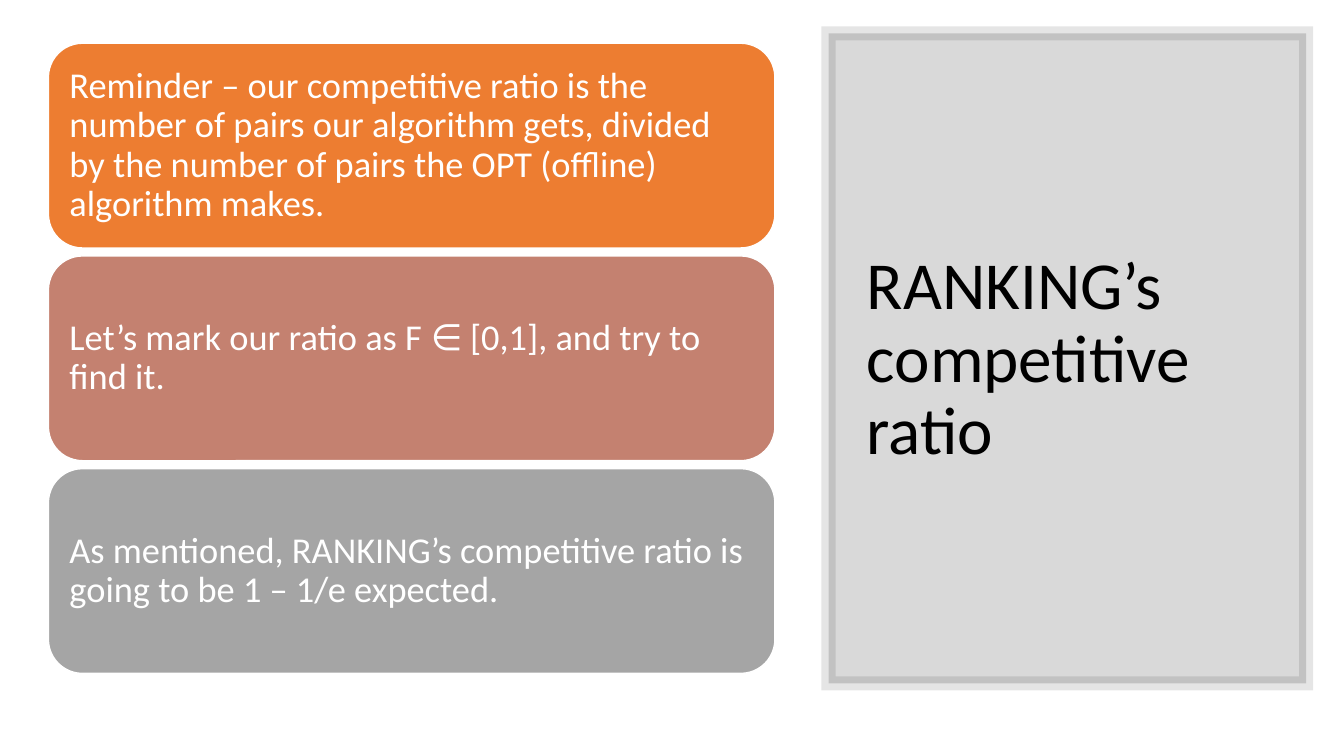
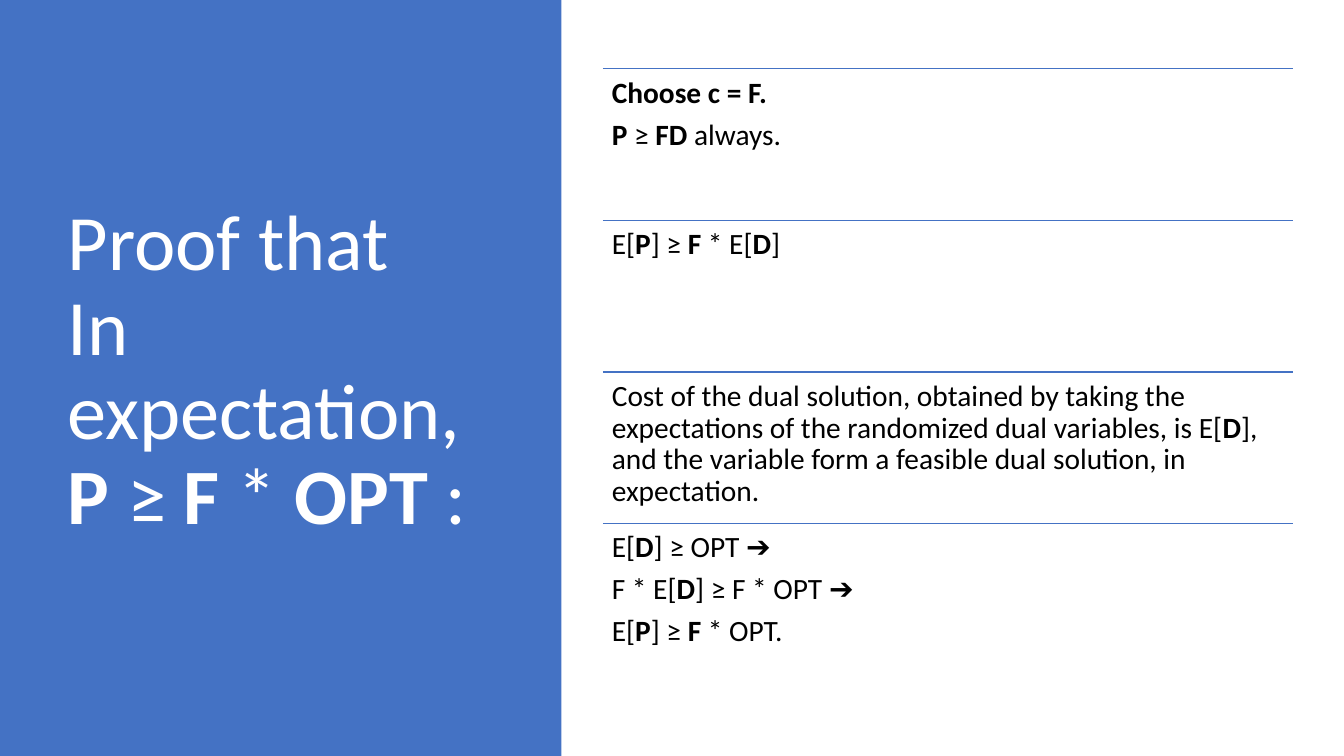
from dataclasses import dataclass

from lxml import etree
from pptx import Presentation
from pptx.dml.color import RGBColor
from pptx.enum.shapes import MSO_CONNECTOR, MSO_SHAPE
from pptx.enum.text import MSO_ANCHOR, MSO_AUTO_SIZE, PP_ALIGN
from pptx.oxml.ns import qn
from pptx.util import Cm, Pt

STRAIGHT = MSO_CONNECTOR.STRAIGHT
RECTANGLE = MSO_SHAPE.RECTANGLE
ROUNDED = MSO_SHAPE.ROUNDED_RECTANGLE
TOP, MIDDLE = MSO_ANCHOR.TOP, MSO_ANCHOR.MIDDLE
NO_AUTOFIT = MSO_AUTO_SIZE.NONE
LEFT = PP_ALIGN.LEFT
TITLE_ONLY = 5
BOLD_MARK = "|"


@dataclass(frozen=True)
class Theme:
    font: str = "Calibri"
    black: str = "000000"
    white: str = "FFFFFF"
    blue: str = "4472C4"
    cards: tuple = ("ED7D31", "C48170", "A5A5A5")
    title_size: float = 48
    large_title_size: float = 56
    card_size: float = 26
    step_size: float = 21
    line_spacing: float = 0.9
    step_gap: float = 7.35


THEME = Theme()

CARDS = (
    "Reminder – our competitive ratio is the number of pairs our algorithm gets, "
    "divided by the number of pairs the OPT (offline) algorithm makes.",
    "Let’s mark our ratio as F ∈ [0,1], and try to find it.",
    "As mentioned, RANKING’s competitive ratio is going to be 1 – 1/e expected.",
)

STEPS = (
    ("|Choose c = F.|", "|P| ≥ |FD |always."),
    ("E[|P|] ≥ |F |* E[|D|]",),
    ("Cost of the dual solution, obtained by taking the expectations of the "
     "randomized dual variables, is E[|D|], and the variable form a feasible "
     "dual solution, in expectation.",),
    ("E[|D|] ≥ OPT ➔", "F * E[|D|] ≥ F * OPT ➔", "E[|P|] ≥ |F |* OPT."),
)


def set_values(target, values):
    for name, value in values.items():
        setattr(target, name, value)


def set_frame(frame, anchor, inset=None):
    values = {"word_wrap": True, "auto_size": NO_AUTOFIT, "vertical_anchor": anchor}
    if inset is not None:
        sides = ("left", "top", "right", "bottom")
        values.update({f"margin_{side}": Cm(inset) for side in sides})
    set_values(frame, values)


def add_spans(para, text, size, color):
    for index, part in enumerate(text.split(BOLD_MARK)):
        if not part:
            continue
        span = para.add_run()
        span.text = part
        set_values(span.font, {"name": THEME.font, "size": Pt(size), "bold": index % 2 == 1})
        span.font.color.rgb = RGBColor.from_string(color)


def write_paragraphs(frame, texts, size, color, gap=0):
    for index, text in enumerate(texts):
        para = frame.add_paragraph() if index else frame.paragraphs[0]
        set_values(para, {
            "alignment": LEFT,
            "line_spacing": THEME.line_spacing,
            "space_before": Pt(0),
            "space_after": Pt(gap),
        })
        for number, line in enumerate(text.split("\n")):
            if number:
                para.add_line_break()
            add_spans(para, line, size, color)


def set_title(page, place, text, size, color):
    title = page.shapes.title
    set_values(title, dict(zip(("left", "top", "width", "height"), map(Cm, place))))
    set_frame(title.text_frame, MIDDLE)
    write_paragraphs(title.text_frame, [text], size, color)


def add_block(page, preset, place, fill):
    block = page.shapes.add_shape(preset, *map(Cm, place))
    block.shadow.inherit = False
    block.fill.solid()
    block.fill.fore_color.rgb = RGBColor.from_string(fill)
    block.line.fill.background()
    return block


def set_outline(shape, color, width):
    shape.line.color.rgb = RGBColor.from_string(color)
    shape.line.width = Pt(width)


def set_opacity(fill_parent, percent):
    color = fill_parent.find(qn("a:solidFill")).find(qn("a:srgbClr"))
    etree.SubElement(color, qn("a:alpha"), val=str(percent * 1000))


def add_panel(page, place, fill):
    panel = add_block(page, RECTANGLE, place, fill)
    page.shapes.title._element.addprevious(panel._element)
    return panel


def add_framed_panel(page, place):
    panel = add_panel(page, place, THEME.black)
    set_outline(panel, THEME.black, 10)
    properties = panel._element.spPr
    outline = properties.find(qn("a:ln"))
    set_opacity(properties, 15)
    set_opacity(outline, 10)
    etree.SubElement(outline, qn("a:miter"), lim="800000")


def add_card(page, place, text, fill):
    card = add_block(page, ROUNDED, place, fill)
    set_outline(card, THEME.white, 1)
    set_frame(card.text_frame, MIDDLE, 0.28)
    write_paragraphs(card.text_frame, [text], THEME.card_size, THEME.white)


def add_rule(page, left, top, width):
    rule = page.shapes.add_connector(STRAIGHT, Cm(left), Cm(top), Cm(left + width), Cm(top))
    set_outline(rule, THEME.blue, 1)
    etree.SubElement(rule._element.spPr, qn("a:effectLst"))


def add_step(page, left, top, width, height, texts):
    add_rule(page, left, top, width)
    box = page.shapes.add_textbox(Cm(left), Cm(top), Cm(width), Cm(height))
    set_frame(box.text_frame, TOP, 0.23)
    write_paragraphs(box.text_frame, texts, THEME.step_size, THEME.black, THEME.step_gap)


def add_page(deck):
    return deck.slides.add_slide(deck.slide_layouts[TITLE_ONLY])


def build_ratio_page(deck):
    page = add_page(deck)
    add_framed_panel(page, (20.88, 0.84, 12.04, 16.38))
    set_title(page, (21.59, 1.78, 10.57, 14.61), "RANKING’s competitive ratio",
              THEME.title_size, THEME.black)
    left, top, width, height, pitch = 1.22, 1.09, 18.31, 5.16, 5.36
    for index, (text, fill) in enumerate(zip(CARDS, THEME.cards)):
        add_card(page, (left, top + index * pitch, width, height), text, fill)


def build_proof_page(deck):
    page = add_page(deck)
    add_panel(page, (0, 0, 14.15, 19.05), THEME.blue)
    set_title(page, (1.45, 1.73, 10.57, 15.29),
              "Proof that\nIn expectation, |P| ≥ |F |*| OPT| :",
              THEME.large_title_size, THEME.white)
    left, top, width, height = 15.19, 1.73, 17.4, 3.82
    for index, texts in enumerate(STEPS):
        add_step(page, left, top + index * height, width, height, texts)


def main():
    deck = Presentation()
    set_values(deck, {"slide_width": Cm(33.87), "slide_height": Cm(19.05)})
    build_ratio_page(deck)
    build_proof_page(deck)
    deck.save("out.pptx")


if __name__ == "__main__":
    main()
